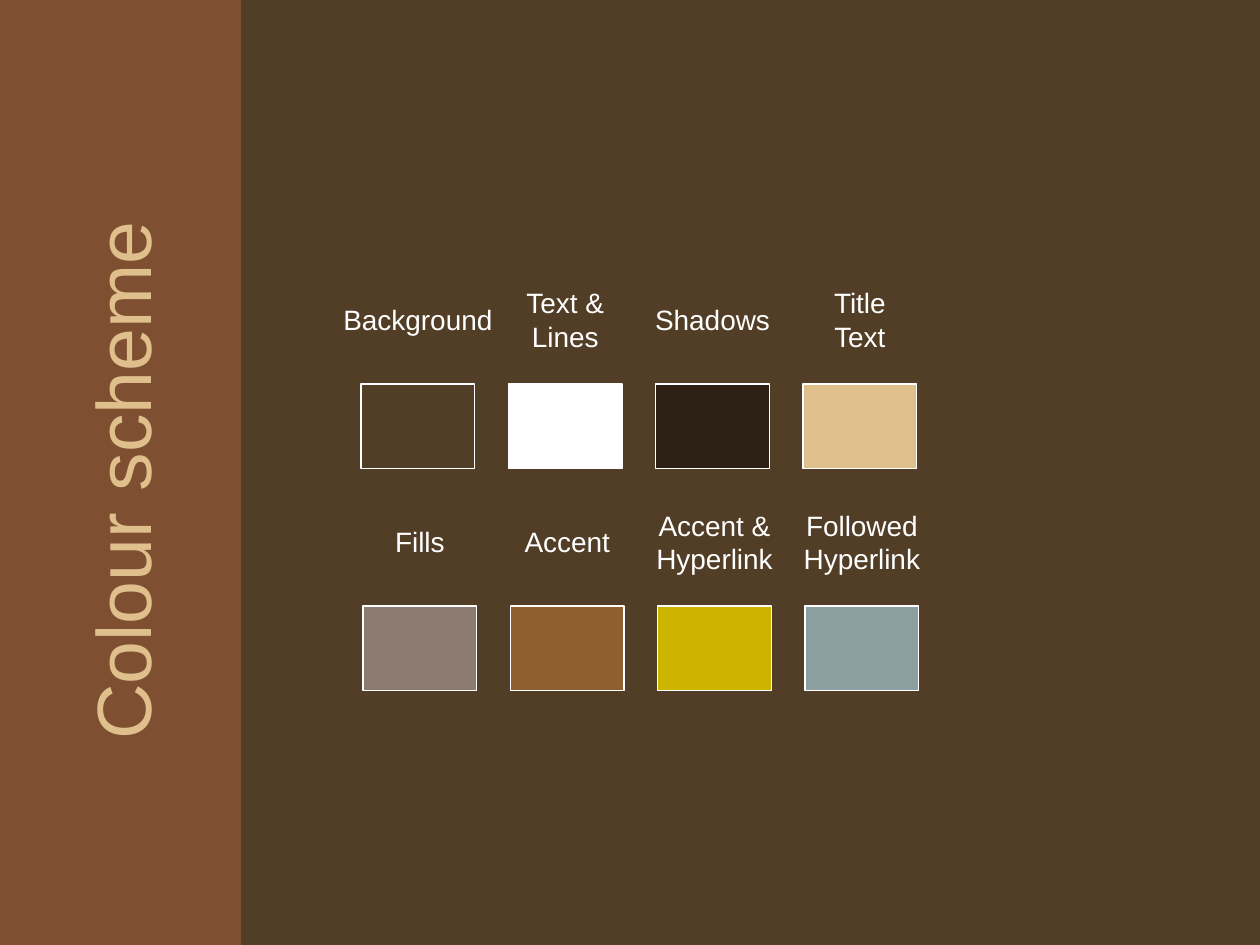
"""Build a slide that shows the eight colours of a colour scheme as labelled swatches."""
from dataclasses import dataclass

from pptx import Presentation
from pptx import util as u
from pptx.dml.color import RGBColor
from pptx.enum import shapes, text
from pptx.slide import Slide

COLOURS = {
    "background": "523E26",
    "text": "FFFFFF",
    "shadows": "2D2015",
    "title": "DFC08D",
    "fills": "8C7B70",
    "accent": "8F5F2F",
    "hyperlink": "CCB400",
    "followed": "8C9EA0",
    "sidebar": "7F4F31",
}
FONT = "Arial"
SWATCH_WIDTH, SWATCH_HEIGHT = 2.29, 1.7
SWATCH_PITCH = 2.97
LABEL_RISE = 1.3
LINE_HEIGHT, LABEL_PADDING = 0.69, 0.25


@dataclass
class Swatch:
    label: str
    colour: str
    label_width: float


@dataclass
class SwatchRow:
    left: float
    top: float
    swatches: list[Swatch]


ROWS = [
    SwatchRow(7.28, 7.74, [
        Swatch("Background", "background", 3.53),
        Swatch("Text &\nLines", "text", 2.13),
        Swatch("Shadows", "shadows", 2.82),
        Swatch("Title\vText", "title", 1.6),
    ]),
    SwatchRow(7.32, 12.22, [
        Swatch("Fills", "fills", 1.5),
        Swatch("Accent", "accent", 2.24),
        Swatch("Accent &\nHyperlink", "hyperlink", 2.9),
        Swatch("Followed\nHyperlink", "followed", 2.9),
    ]),
]


def rgb(name: str) -> RGBColor:
    """Return the named colour."""
    return RGBColor.from_string(COLOURS[name])


def add_rectangle(slide: Slide, left: float, top: float, width: float, height: float,
                  fill: str, line: str | None = None) -> None:
    """Draw a filled rectangle, outlined if a line colour is named."""
    shape = slide.shapes.add_shape(
        shapes.MSO_SHAPE.RECTANGLE, u.Cm(left), u.Cm(top), u.Cm(width), u.Cm(height))
    shape.shadow.inherit = False
    shape.fill.solid()
    shape.fill.fore_color.rgb = rgb(fill)
    if line:
        shape.line.color.rgb = rgb(line)
        shape.line.width = u.Pt(0.75)
    else:
        shape.line.fill.background()


def add_text(slide: Slide, content: str, centre_x: float, centre_y: float, width: float,
             height: float, size: int, colour: str, wrap: bool = False,
             rotation: float = 0) -> None:
    """Write centred text in a box placed by its centre, growing unless it wraps."""
    shape = slide.shapes.add_textbox(
        u.Cm(centre_x - width / 2), u.Cm(centre_y - height / 2), u.Cm(width), u.Cm(height))
    shape.rotation = rotation
    frame = shape.text_frame
    frame.word_wrap = wrap
    frame.auto_size = (text.MSO_AUTO_SIZE.NONE if wrap
                       else text.MSO_AUTO_SIZE.SHAPE_TO_FIT_TEXT)
    frame.vertical_anchor = text.MSO_ANCHOR.MIDDLE
    frame.text = content
    for paragraph in frame.paragraphs:
        paragraph.alignment = text.PP_ALIGN.CENTER
        paragraph.font.name = FONT
        paragraph.font.size = u.Pt(size)
        paragraph.font.color.rgb = rgb(colour)


def add_swatch_row(slide: Slide, row: SwatchRow) -> None:
    """Draw a row of evenly spaced swatches with labels above them."""
    for column, swatch in enumerate(row.swatches):
        left = row.left + column * SWATCH_PITCH
        add_rectangle(slide, left, row.top, SWATCH_WIDTH, SWATCH_HEIGHT,
                      swatch.colour, "text")
        height = len(swatch.label.splitlines()) * LINE_HEIGHT + LABEL_PADDING
        add_text(slide, swatch.label, left + SWATCH_WIDTH / 2, row.top - LABEL_RISE,
                 swatch.label_width, height, 16, "text")


def main() -> None:
    """Build and save the presentation."""
    presentation = Presentation()
    presentation.slide_width, presentation.slide_height = u.Cm(25.4), u.Cm(19.05)
    slide = presentation.slides.add_slide(presentation.slide_layouts[6])
    slide.background.fill.solid()
    slide.background.fill.fore_color.rgb = rgb("background")
    add_rectangle(slide, 0, 0, 4.86, 19.05, "sidebar")
    add_text(slide, "Colour scheme", 2.43, 9.69, 18.72, 3.18, 44, "title",
             wrap=True, rotation=270)
    for row in ROWS:
        add_swatch_row(slide, row)
    presentation.save("out.pptx")


if __name__ == "__main__":
    main()
